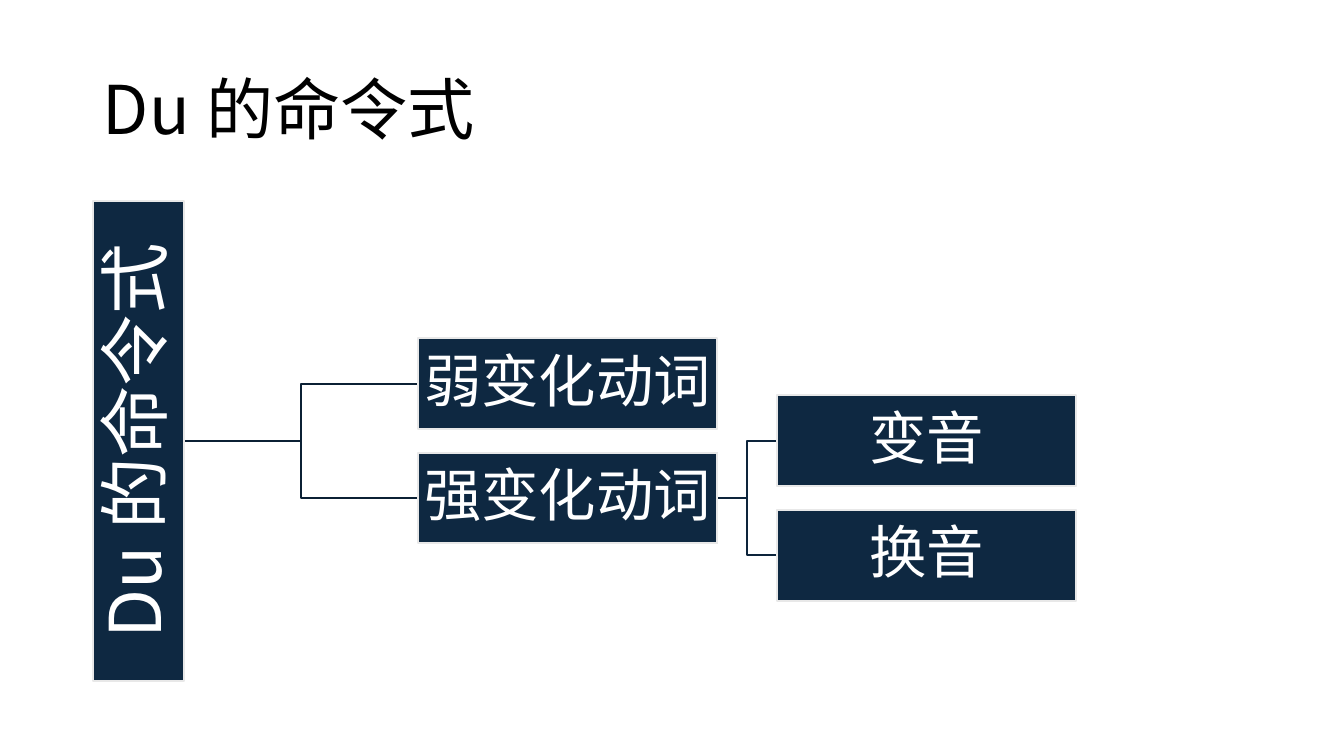
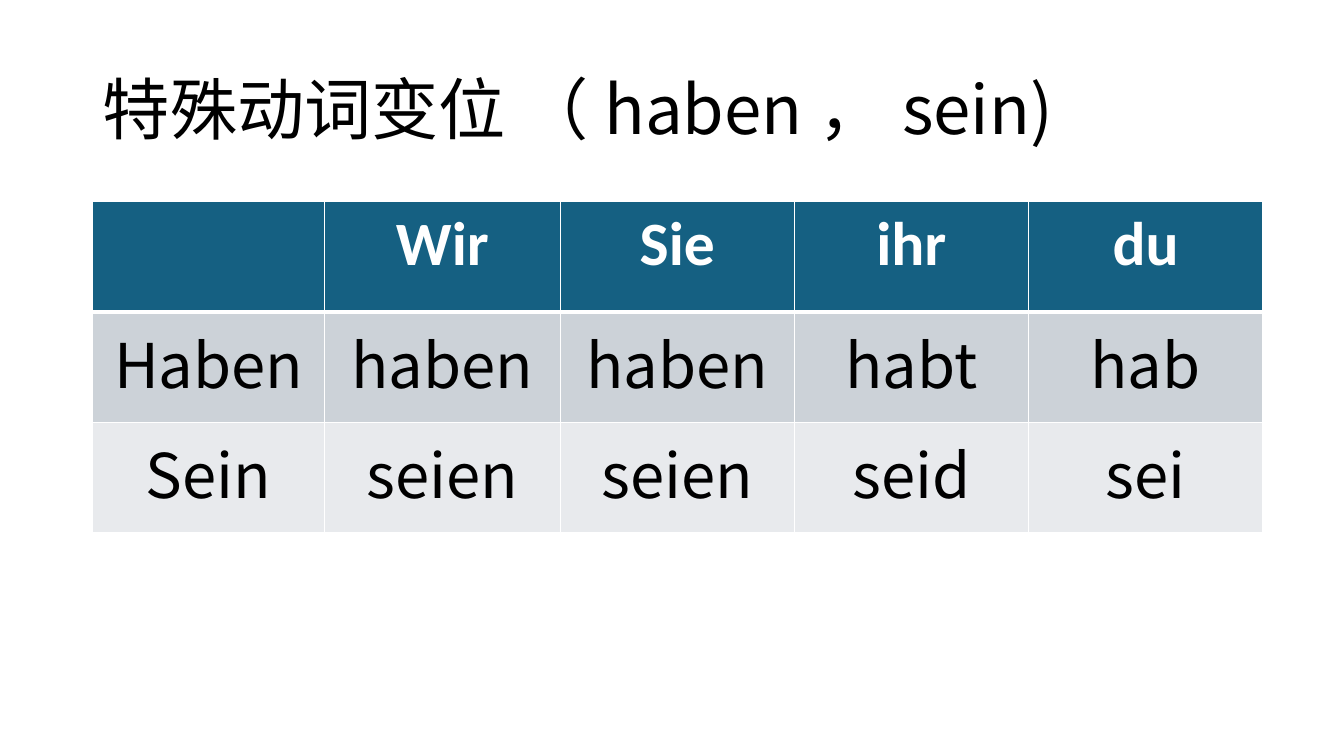
import pptx
import pptx.util
import pptx.dml.color
import pptx.enum.shapes
import pptx.enum.text
import pptx.oxml.ns
from lxml import etree

Cm, Pt = pptx.util.Cm, pptx.util.Pt
RGBColor = pptx.dml.color.RGBColor
PP_ALIGN = pptx.enum.text.PP_ALIGN
MSO_ANCHOR = pptx.enum.text.MSO_ANCHOR
MSO_SHAPE = pptx.enum.shapes.MSO_SHAPE
MSO_CONNECTOR = pptx.enum.shapes.MSO_CONNECTOR
qn = pptx.oxml.ns.qn

BLACK = RGBColor(0x00, 0x00, 0x00)
WHITE = RGBColor(0xFF, 0xFF, 0xFF)
NAVY = RGBColor(0x0E, 0x28, 0x41)
NODE_EDGE = RGBColor(0xE8, 0xE8, 0xE8)
LINK_1 = RGBColor(0x0B, 0x20, 0x34)
LINK_2 = RGBColor(0x0D, 0x24, 0x3B)
HEADER = RGBColor(0x15, 0x60, 0x82)
BAND_DARK = RGBColor(0xCC, 0xD2, 0xD8)
BAND_LIGHT = RGBColor(0xE8, 0xEA, 0xED)
CJK_FONT = "Noto Sans CJK SC"
HEAD_FONT = "Calibri"
LEFT = 2.34


def format_text(p, size, color, align, font=CJK_FONT, bold=False):
    p.alignment = align
    for r in p.runs:
        r.font.size = Pt(size)
        r.font.bold = bold
        r.font.color.rgb = color
        r.font.name = font
        ea = etree.SubElement(r.font._element, qn("a:ea"))
        ea.set("typeface", font)


def add_titled_slide(title):
    s = prs.slides.add_slide(prs.slide_layouts[5])
    sp = s.shapes.title
    sp.left, sp.top, sp.width, sp.height = Cm(LEFT), Cm(1.01), Cm(29.21), Cm(3.68)
    tf = sp.text_frame
    tf.text = title
    tf.word_wrap = True
    tf.auto_size = pptx.enum.text.MSO_AUTO_SIZE.NONE
    tf.vertical_anchor = MSO_ANCHOR.MIDDLE
    tf.paragraphs[0].line_spacing = 0.9
    format_text(tf.paragraphs[0], 48, BLACK, PP_ALIGN.LEFT)
    return s


prs = pptx.Presentation()
prs.slide_width, prs.slide_height = Cm(33.87), Cm(19.05)

# Slide 1: tree of imperative forms
s = add_titled_slide("Du的命令式")
NODE_W, NODE_H = 7.54, 2.29
ROOT_LEN = 12.09
HALF_STEP = 1.44
COL_1, COL_2 = 10.54, 19.58
ROOT_Y = 11.11
STRONG_Y = ROOT_Y + HALF_STEP

# Links: start x, start y, end x, colour; each forks up and down
forks = [
    (COL_1 + NODE_W, STRONG_Y, COL_2, LINK_2),
    (LEFT + NODE_H, ROOT_Y, COL_1, LINK_1),
]
for x1, y, x2, color in forks:
    for dy in (HALF_STEP, -HALF_STEP):
        link = s.shapes.add_connector(
            MSO_CONNECTOR.ELBOW, Cm(x1), Cm(y), Cm(x2), Cm(y + dy))
        link.line.color.rgb = color
        link.line.width = Pt(1.5)
        etree.SubElement(link._element.spPr, qn("a:effectLst"))

# Nodes: text, centre x, centre y, width, rotation, text size
nodes = [
    ("Du的命令式", LEFT + NODE_H / 2, ROOT_Y, ROOT_LEN, 270, 51),
    ("弱变化动词", COL_1 + NODE_W / 2, ROOT_Y - HALF_STEP, NODE_W, 0, 41),
    ("强变化动词", COL_1 + NODE_W / 2, STRONG_Y, NODE_W, 0, 41),
    ("变音", COL_2 + NODE_W / 2, STRONG_Y - HALF_STEP, NODE_W, 0, 41),
    ("换音", COL_2 + NODE_W / 2, STRONG_Y + HALF_STEP, NODE_W, 0, 41),
]
for text, cx, cy, width, rotation, size in nodes:
    sp = s.shapes.add_shape(
        MSO_SHAPE.RECTANGLE, Cm(cx - width / 2), Cm(cy - NODE_H / 2),
        Cm(width), Cm(NODE_H))
    sp.rotation = rotation
    sp.shadow.inherit = False
    sp.fill.solid()
    sp.fill.fore_color.rgb = NAVY
    sp.line.color.rgb = NODE_EDGE
    sp.line.width = Pt(1.5)
    tf = sp.text_frame
    tf.text = text
    tf.word_wrap = True
    tf.vertical_anchor = MSO_ANCHOR.MIDDLE
    tf.margin_left = tf.margin_right = tf.margin_top = tf.margin_bottom = Cm(0.08)
    tf.paragraphs[0].line_spacing = 0.9
    format_text(tf.paragraphs[0], size, WHITE, PP_ALIGN.CENTER)

# Slide 2: conjugation table
s = add_titled_slide("特殊动词变位 （haben，sein)")
rows = [
    ["", "Wir", "Sie", "ihr", "du"],
    ["Haben", "haben", "haben", "habt", "hab"],
    ["Sein", "seien", "seien", "seid", "sei"],
]
row_fills = [HEADER, BAND_DARK, BAND_LIGHT]
col_widths = [5.84, 5.94, 5.9, 5.9, 5.9]
ROW_H = 2.78
table = s.shapes.add_table(
    len(rows), len(col_widths), Cm(LEFT), Cm(5.08),
    Cm(sum(col_widths)), Cm(ROW_H * len(rows))).table
for col, width in zip(table.columns, col_widths):
    col.width = Cm(width)

for i, row in enumerate(rows):
    table.rows[i].height = Cm(ROW_H)
    for j, text in enumerate(row):
        cell = table.cell(i, j)
        cell.fill.solid()
        cell.fill.fore_color.rgb = row_fills[i]
        p = cell.text_frame.paragraphs[0]
        p.text = text
        if i == 0:
            format_text(p, 44, WHITE, PP_ALIGN.CENTER, HEAD_FONT, True)
        else:
            format_text(p, 44, BLACK, PP_ALIGN.CENTER)

        # White borders, thicker under the header
        borders = [("a:lnL", 1), ("a:lnR", 1),
                   ("a:lnT", 3 if i == 1 else 1), ("a:lnB", 3 if i == 0 else 1)]
        tc_pr = cell._tc.get_or_add_tcPr()
        for k, (tag, width) in enumerate(borders):
            ln = etree.Element(qn(tag), w=str(Pt(width)))
            fill = etree.SubElement(ln, qn("a:solidFill"))
            etree.SubElement(fill, qn("a:srgbClr"), val=str(WHITE))
            tc_pr.insert(k, ln)

prs.save("out.pptx")
